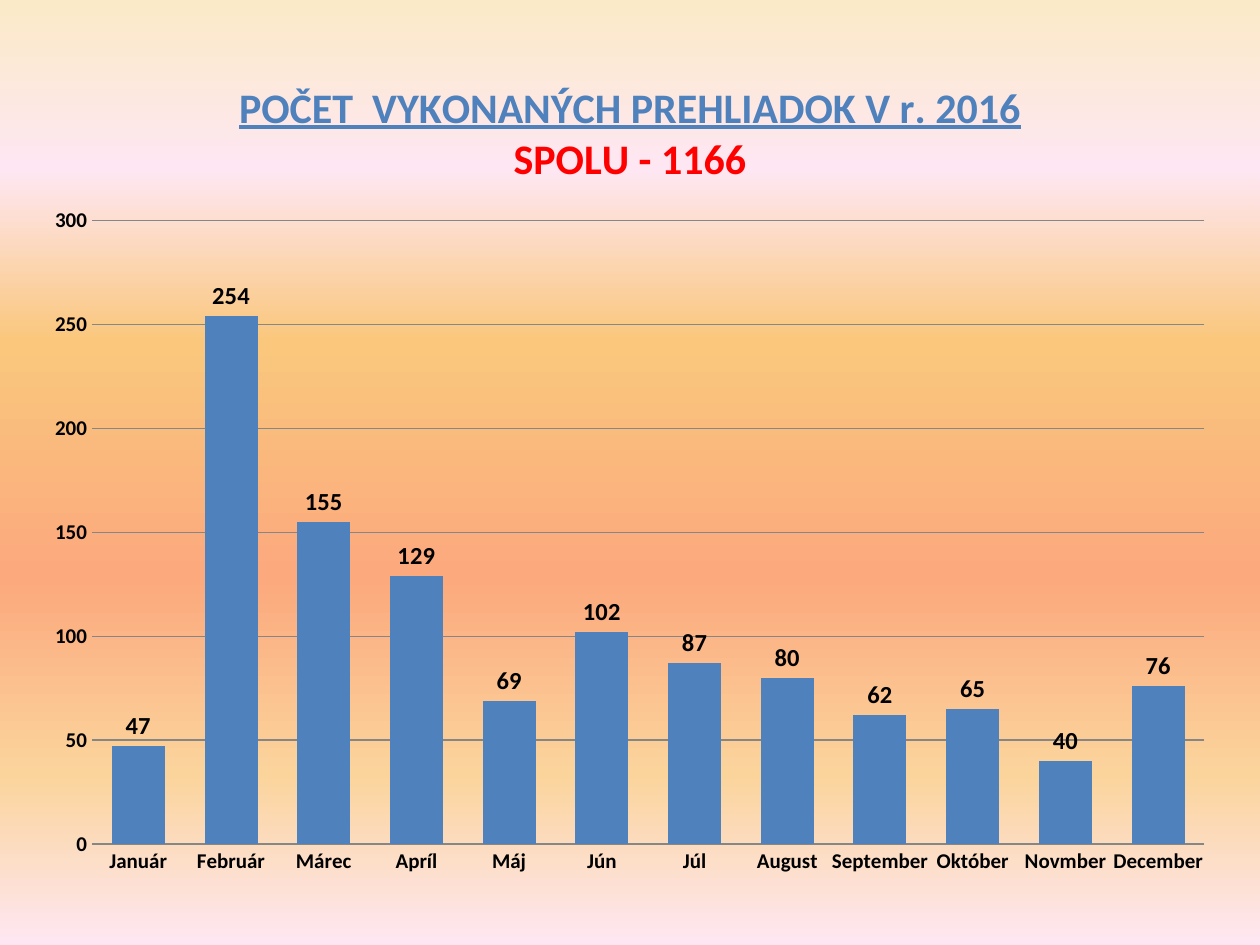
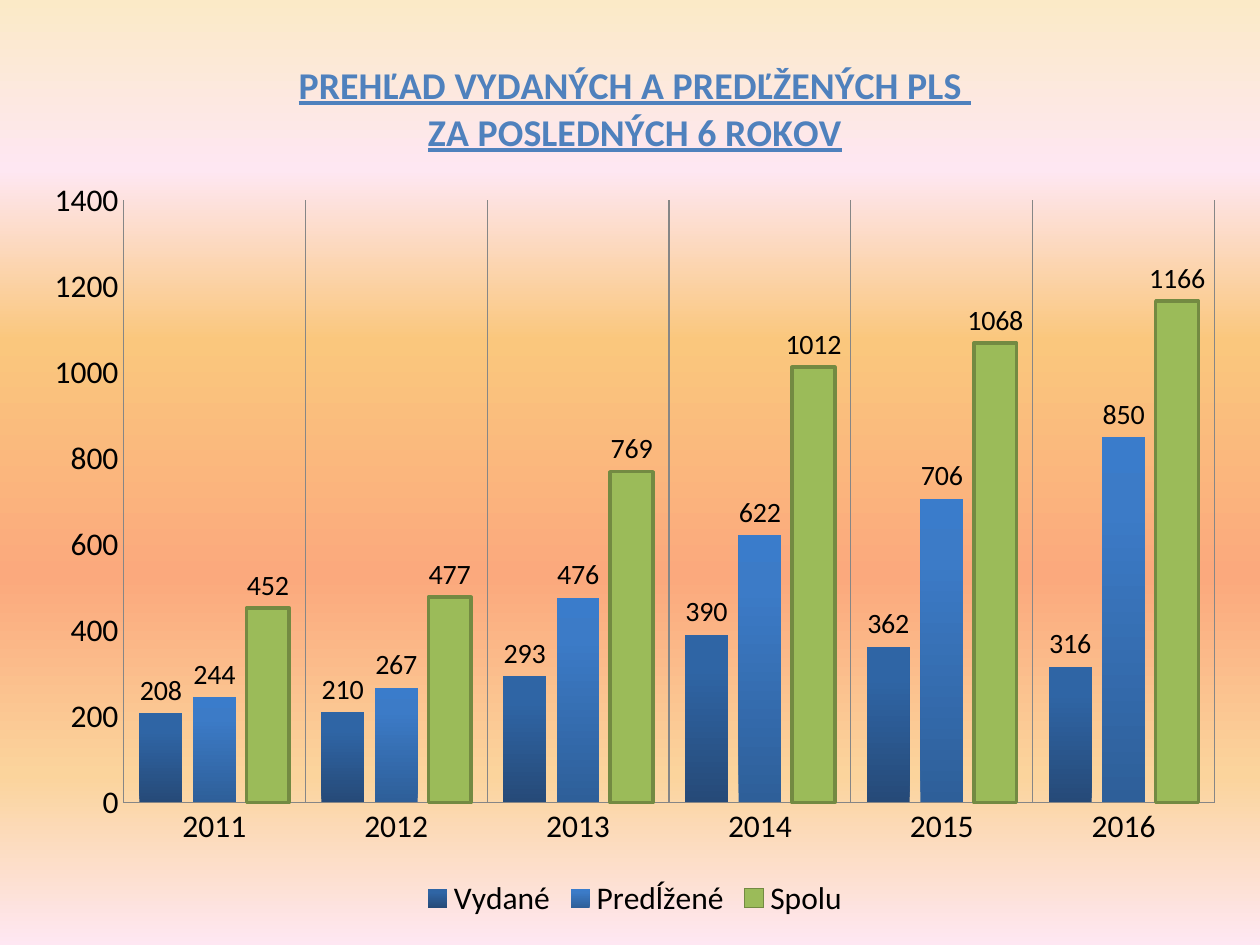
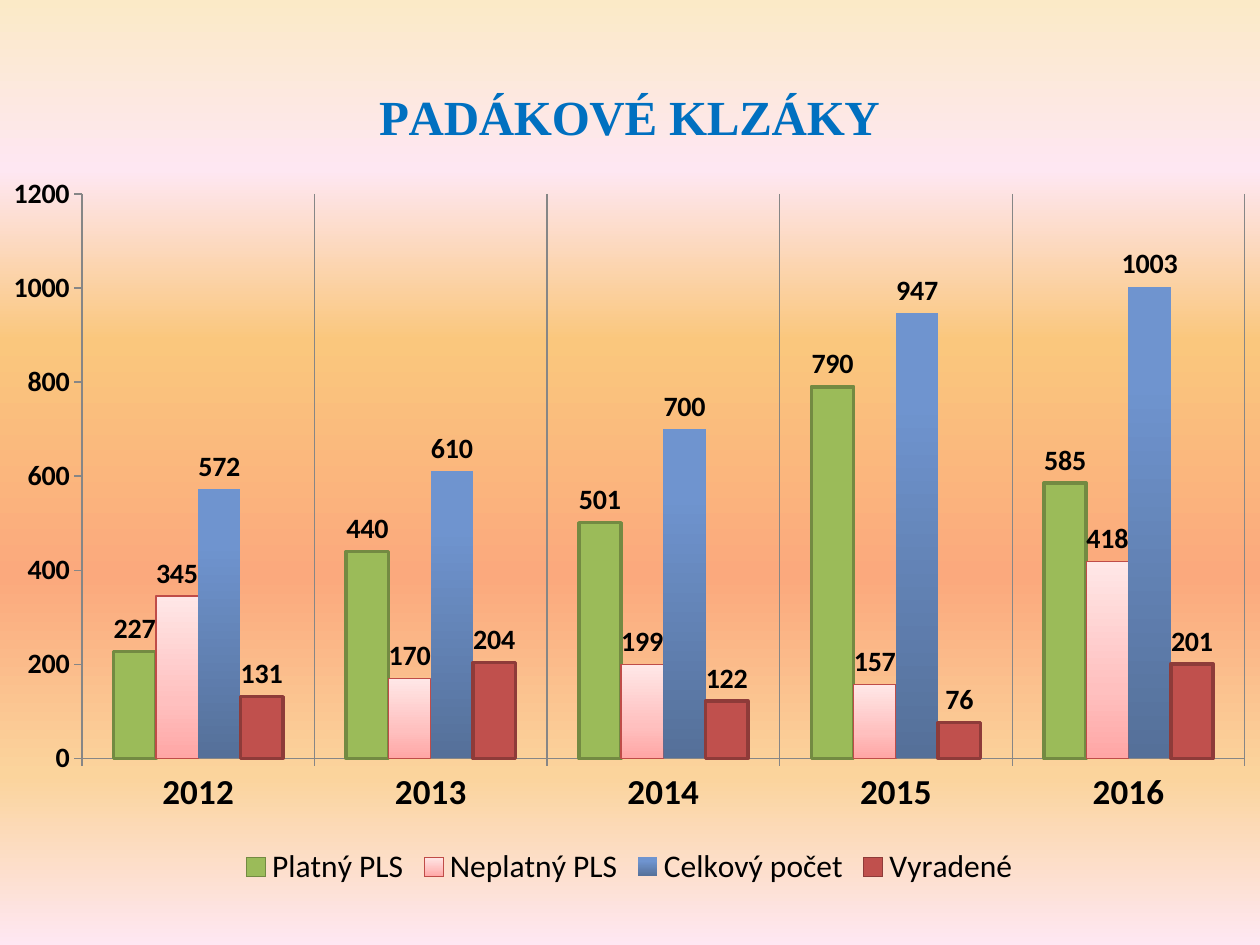
"""Three column charts on a shared sunset gradient, saved as out.pptx."""
from pptx import Presentation
from pptx.chart.data import CategoryChartData
from pptx.dml.color import RGBColor
from pptx.enum.chart import XL_CHART_TYPE as ChartType
from pptx.enum.chart import XL_LABEL_POSITION as LabelSpot
from pptx.enum.chart import XL_LEGEND_POSITION as LegendSpot
from pptx.enum.chart import XL_TICK_MARK as Tick
from pptx.oxml import parse_xml
from pptx.oxml.ns import nsdecls, qn
from pptx.util import Inches, Pt

SUNSET = [(0, "FBEAC7"), (18, "FEE7F2"), (36, "FAC77D"),
          (61, "FBA97D"), (82, "FBD49C"), (100, "FEE7F2")]
NAVY = [(0, "264A78"), (80, "2F65A5"), (100, "2F65A5")]
AZURE = [(0, "2E5F99"), (80, "3C7BC7"), (100, "3A7CCB")]
STEEL = [(0, "557099"), (80, "6F94CF"), (100, "6F94CF")]
ROSE = [(0, "FFA6A5"), (35, "FFC0BF"), (100, "FFE7E7")]
BLUE, SKY, RED, BLACK, GREY = "4F81BD", "0070C0", "FF0000", "000000", "868686"
GREEN, GREEN_EDGE = "9BBB59", ("738A42", 2)
BRICK, BRICK_EDGE, ROSE_EDGE = "C0504D", ("8E3B39", 2), ("BF4C48", 0.75)

CHARTS = [
    dict(
        title=[("POČET  VYKONANÝCH PREHLIADOK V r. 2016", BLUE, True),
               ("SPOLU - 1166", RED, False)],
        title_font=("Calibri", 24),
        frame=(0.25, 0.43, 9.5, 6.65), plot=(0.73, 1.75, 9.56, 6.7),
        categories=["Január", "Február", "Márec", "Apríl", "Máj", "Jún", "Júl",
                    "August", "September", "Október", "Novmber", "December"],
        series=[("Series 1", [47, 254, 155, 129, 69, 102, 87, 80, 62, 65, 40, 76],
                 BLUE, None)],
        base=10, category=12, value=12, label=14, bold=True,
        scale=(300, 50), gap=75, overlap=-25,
        tick=Tick.NONE, rows=True, legend=False),
    dict(
        title=[("PREHĽAD VYDANÝCH A PREDĽŽENÝCH PLS ", BLUE, True),
               ("ZA POSLEDNÝCH 6 ROKOV", BLUE, True)],
        title_font=("Calibri", 21.6),
        frame=(0.25, 0.25, 9.58, 7.08), plot=(0.98, 1.59, 9.64, 6.37),
        categories=["2011", "2012", "2013", "2014", "2015", "2016"],
        series=[("Vydané", [208, 210, 293, 390, 362, 316], NAVY, None),
                ("Predĺžené", [244, 267, 476, 622, 706, 850], AZURE, None),
                ("Spolu", [452, 477, 769, 1012, 1068, 1166], GREEN, GREEN_EDGE)],
        base=18, category=18, value=18, label=16, bold=False,
        scale=(1400, 200), gap=75, overlap=-25,
        tick=Tick.NONE, rows=False, legend=True),
    dict(
        title=[("PADÁKOVÉ KLZÁKY", SKY, False)],
        title_font=("Times New Roman", 28),
        frame=(-0.09, 0.43, 10.17, 6.65), plot=(0.65, 1.54, 9.88, 6.02),
        categories=["2012", "2013", "2014", "2015", "2016"],
        series=[("Platný PLS", [227, 440, 501, 790, 585], GREEN, GREEN_EDGE),
                ("Neplatný PLS", [345, 170, 199, 157, 418], ROSE, ROSE_EDGE),
                ("Celkový počet", [572, 610, 700, 947, 1003], STEEL, None),
                ("Vyradené", [131, 204, 122, 76, 201], BRICK, BRICK_EDGE)],
        base=18, category=20, value=16, label=16, bold=True,
        scale=(1200, 200), gap=150, overlap=0,
        tick=Tick.OUTSIDE, rows=False, legend=True),
]


def rgb(color):
    return RGBColor.from_string(color)


def paint_gradient(fill, owner, stops, angle):
    fill.gradient()
    gradient = owner.find(".//" + qn("a:gradFill"))
    stop_list = gradient.find(qn("a:gsLst"))
    stop_list.clear()
    for share, color in stops:
        stop_list.append(parse_xml(
            f'<a:gs {nsdecls("a")} pos="{share * 1000}">'
            f'<a:srgbClr val="{color}"/></a:gs>'))
    gradient.find(qn("a:lin")).set("ang", str(angle * 60000))


def set_font(font, size, bold, color=BLACK, face="Calibri"):
    font.name, font.size, font.bold = face, Pt(size), bold
    font.color.rgb = rgb(color)


def draw_line(line, color, width):
    line.color.rgb = rgb(color)
    line.width = Pt(width)


def place_plot(chart, frame, plot):
    left, top, width, height = frame
    x1, y1, x2, y2 = plot
    shares = dict(x=(x1 - left) / width, y=(y1 - top) / height,
                  w=(x2 - x1) / width, h=(y2 - y1) / height)
    values = "".join(f'<c:{key} val="{share:.4f}"/>' for key, share in shares.items())
    area = chart.element.find(".//" + qn("c:plotArea"))
    for automatic in area.findall(qn("c:layout")):
        area.remove(automatic)
    area.insert(0, parse_xml(
        f'<c:layout {nsdecls("c")}><c:manualLayout><c:layoutTarget val="inner"/>'
        f'<c:xMode val="edge"/><c:yMode val="edge"/>{values}'
        '</c:manualLayout></c:layout>'))


def write_title(chart, lines, face, size):
    chart.has_title = True
    text = chart.chart_title.text_frame
    for number, (words, color, underlined) in enumerate(lines):
        paragraph = text.add_paragraph() if number else text.paragraphs[0]
        run = paragraph.add_run()
        run.text = words
        set_font(run.font, size, True, color, face)
        run.font.underline = underlined


def style_axis(axis, size, bold, tick, grid):
    axis.major_tick_mark, axis.minor_tick_mark = tick, Tick.NONE
    set_font(axis.tick_labels.font, size, bold)
    draw_line(axis.format.line, GREY, 0.75)
    axis.has_major_gridlines = grid
    if grid:
        draw_line(axis.major_gridlines.format.line, GREY, 0.75)


def style_series(series, paint, edge, label_size, bold):
    series.invert_if_negative = False
    if isinstance(paint, str):
        series.format.fill.solid()
        series.format.fill.fore_color.rgb = rgb(paint)
    else:
        paint_gradient(series.format.fill, series._element, paint, 270)
    if edge:
        draw_line(series.format.line, *edge)
    else:
        series.format.line.fill.background()
    labels = series.data_labels
    labels.show_value = True
    labels.position = LabelSpot.OUTSIDE_END
    set_font(labels.font, label_size, bold)


def add_chart(slide, item):
    data = CategoryChartData()
    data.categories = item["categories"]
    for name, values, _, _ in item["series"]:
        data.add_series(name, values)
    chart = slide.shapes.add_chart(
        ChartType.COLUMN_CLUSTERED, *map(Inches, item["frame"]), data).chart
    set_font(chart.font, item["base"], False)
    write_title(chart, item["title"], *item["title_font"])
    place_plot(chart, item["frame"], item["plot"])

    bold, tick, rows = item["bold"], item["tick"], item["rows"]
    style_axis(chart.category_axis, item["category"], bold, tick, not rows)
    style_axis(chart.value_axis, item["value"], bold, tick, rows)
    chart.value_axis.minimum_scale = 0
    chart.value_axis.maximum_scale, chart.value_axis.major_unit = item["scale"]
    if rows:
        chart.value_axis.format.line.fill.background()

    columns = chart.plots[0]
    columns.vary_by_categories = False
    columns.gap_width, columns.overlap = item["gap"], item["overlap"]
    for series, (_, _, paint, edge) in zip(columns.series, item["series"]):
        style_series(series, paint, edge, item["label"], bold)

    chart.has_legend = item["legend"]
    if item["legend"]:
        chart.legend.position = LegendSpot.BOTTOM
        chart.legend.include_in_layout = False
        set_font(chart.legend.font, item["base"], False)


def main():
    deck = Presentation()
    deck.slide_width, deck.slide_height = Inches(10), Inches(7.5)
    for item in CHARTS:
        slide = deck.slides.add_slide(deck.slide_layouts[6])
        paint_gradient(slide.background.fill, slide.element, SUNSET, 90)
        add_chart(slide, item)
    deck.save("out.pptx")


if __name__ == "__main__":
    main()
